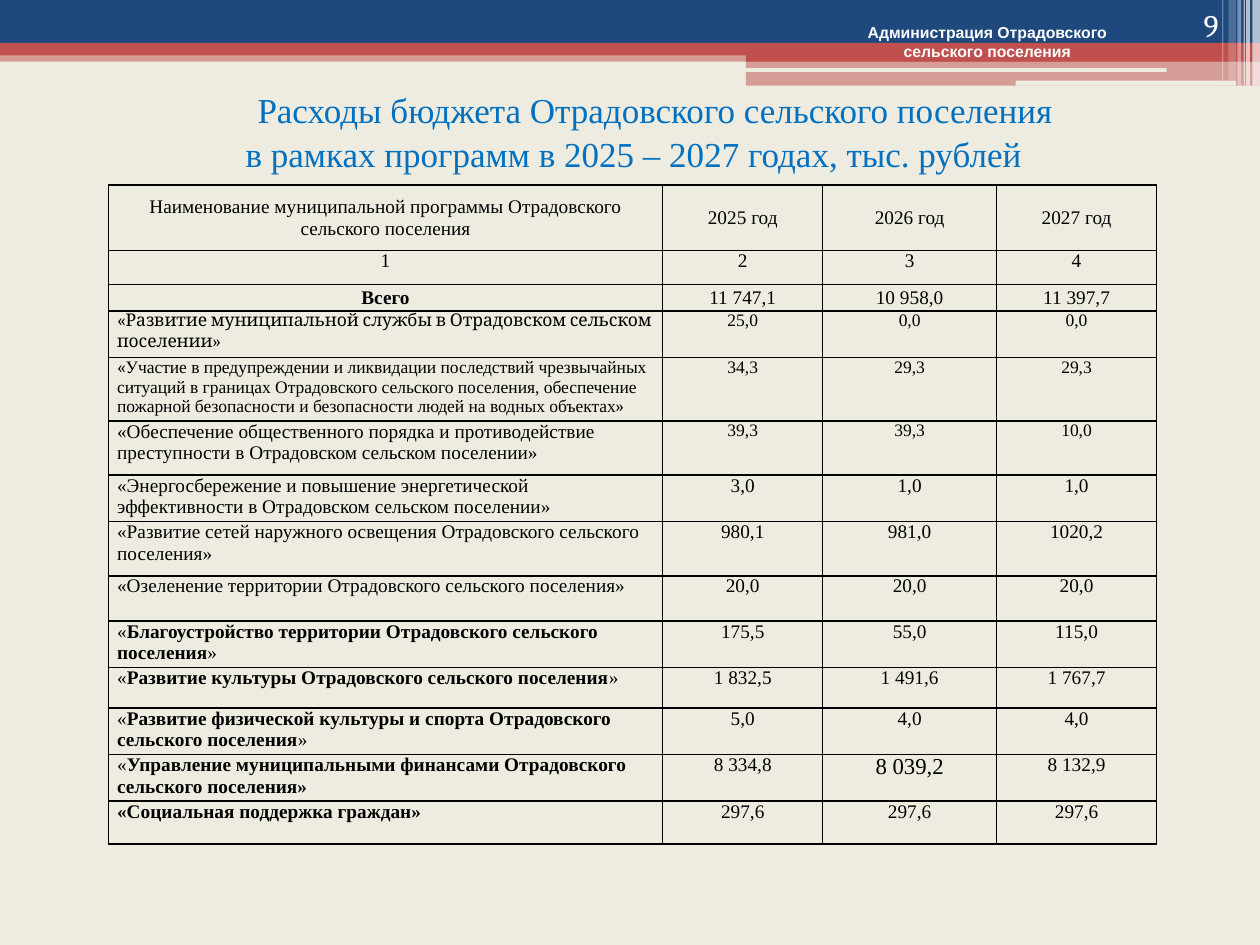
from dataclasses import dataclass

from lxml import etree
from pptx import Presentation
from pptx import util as u
from pptx.dml.color import RGBColor
from pptx.enum import shapes, text
from pptx.oxml import ns


@dataclass(frozen=True)
class Theme:
    paper: str = "EEECE1"
    navy: str = "1F497D"
    red: str = "C0504D"
    white: str = "FFFFFF"
    title: str = "0070C0"
    ink: str = "000000"
    serif: str = "Times New Roman"
    alternate: str = "Cambria"
    sans: str = "Arial"
    title_size: int = 20
    number_size: int = 18
    large: int = 13
    normal: int = 11
    small: int = 10
    label_size: int = 9


THEME = Theme()
UNIT = u.Inches(0.1)  # the slide is a grid of 100 columns by 75 rows
COLUMNS, ROWS = 100, 75
NO_STYLE = "{2D5ABB26-0587-4C30-8999-92F81FD0307C}"
CENTER = text.PP_ALIGN.CENTER
MIDDLE = text.MSO_ANCHOR.MIDDLE
RECT = shapes.MSO_SHAPE.RECTANGLE
ROUND = shapes.MSO_SHAPE.ROUNDED_RECTANGLE

# Page decoration: left, top, width, height, colour, opacity, shape
BANDS = [
    (0, 4, 100, 0.9, THEME.red, 50, RECT),
    (0, 0, 100, 3.4, THEME.navy, 100, RECT),
    (0, 3.4, 100, 1.5 - 0.5, THEME.red, 100, RECT),
    (59.2, 3.9, 40.8, 1, THEME.red, 100, RECT),
    (59.2, 4.8, 40.8, 2, THEME.red, 50, RECT),
    (59.1, 5.4, 33.5, 0.3, THEME.paper, 100, ROUND),
    (80.6, 6.4, 17.5, 0.4, THEME.paper, 100, ROUND),
]
# Light strips at the right edge: left, width, height, opacity
STRIPS = [(99.4, 0.6, 6.8, 65), (98.9, 0.3, 6.8, 65), (98.7, 0.1, 6.8, 60),
          (98.2, 0.3, 6.8, 40), (97.5, 0.6, 6.4, 20), (97, 0.1, 6.4, 30)]

TITLE_LINES = [("Расходы бюджета Отрадовского сельского поселения", 4),
               ("в рамках программ в 2025 – 2027 годах, тыс. рублей", 0.6)]

COLUMN_WIDTHS = [44, 12.7, 13.8, 12.7]
ROW_HEIGHTS = [5.2, 2.7, 2.1, 3.7, 5, 4.3, 3.7, 4.3, 3.6, 3.7, 3.2, 3.7, 3.7, 3.4]
# Text between asterisks is accented: bold, or in the alternate font
TABLE = [
    ("Наименование муниципальной программы Отрадовского сельского поселения",
     "2025 год", "2026 год", "2027 год"),
    ("1", "2", "3", "4"),
    ("*Всего*", "11 747,1", "10 958,0", "11 397,7"),
    ("*«Развитие муниципальной службы в Отрадовском сельском поселении»*",
     "25,0", "0,0", "0,0"),
    ("*«*Участие в предупреждении и ликвидации последствий чрезвычайных ситуаций "
     "в границах Отрадовского сельского поселения, обеспечение пожарной "
     "безопасности и безопасности людей на водных объектах*»*",
     "34,3", "29,3", "29,3"),
    ("«Обеспечение общественного порядка и противодействие преступности "
     "в Отрадовском сельском поселении»", "39,3", "39,3", "10,0"),
    ("«Энергосбережение и повышение энергетической эффективности "
     "в Отрадовском сельском поселении»", "3,0", "1,0", "1,0"),
    ("«Развитие сетей наружного освещения Отрадовского сельского поселения»",
     "980,1", "981,0", "1020,2"),
    ("«Озеленение территории Отрадовского сельского поселения»",
     "20,0", "20,0", "20,0"),
    ("«*Благоустройство территории Отрадовского сельского поселения*»",
     "175,5", "55,0", "115,0"),
    ("«*Развитие культуры Отрадовского сельского поселения*»",
     "1 832,5", "1 491,6", "1 767,7"),
    ("«*Развитие физической культуры и спорта Отрадовского сельского поселения*»",
     "5,0", "4,0", "4,0"),
    ("«*Управление муниципальными финансами Отрадовского сельского поселения»*",
     "8 334,8", "8 039,2", "8 132,9"),
    ("*«Социальная поддержка граждан»*", "297,6", "297,6", "297,6"),
]
HEADER_ROWS = 3
MIDDLE_ROWS = {0, 2}
ALTERNATE_ROWS = {3, 4}
SMALL_CELLS = {(row, col) for row in (3, 4) for col in range(4)}
SMALL_CELLS |= {(5, col) for col in (1, 2, 3)}
LARGE_CELLS = {(12, 2)}


def grid(*lengths):
    return [round(length * UNIT) for length in lengths]


def style(span, font, size, color, bold=False):
    span.font.name = font
    span.font.size = u.Pt(size)
    span.font.bold = bold
    span.font.color.rgb = RGBColor.from_string(color)


def add_band(page, left, top, width, height, color, opacity=100, kind=RECT):
    band = page.shapes.add_shape(kind, *grid(left, top, width, height))
    band.shadow.inherit = False
    band.line.fill.background()
    band.fill.solid()
    band.fill.fore_color.rgb = RGBColor.from_string(color)
    if opacity < 100:
        tint = band.fill._xPr.find(".//" + ns.qn("a:srgbClr"))
        etree.SubElement(tint, ns.qn("a:alpha"), val=str(opacity * 1000))


def add_title(page):
    title = page.shapes.title
    title.left, title.top, title.width, title.height = grid(0, 6.8, COLUMNS, 7.1)
    frame = title.text_frame
    frame.vertical_anchor = MIDDLE
    frame.text = "\n".join(line for line, _ in TITLE_LINES)
    for para, (_, indent) in zip(frame.paragraphs, TITLE_LINES):
        para.alignment = CENTER
        para.line_spacing = u.Pt(25)
        para._p.get_or_add_pPr().set("marL", str(grid(indent)[0]))
        style(para.runs[0], THEME.serif, THEME.title_size, THEME.title)


def add_label(page, place, words, align, anchor, font, size, bold=False):
    frame = page.shapes.add_textbox(*grid(*place)).text_frame
    frame.word_wrap = True
    frame.vertical_anchor = anchor
    frame.text = words
    for para in frame.paragraphs:
        para.alignment = align
        style(para.runs[0], font, size, THEME.white, bold)


def add_borders(cell):
    props = cell._tc.get_or_add_tcPr()
    for place, side in enumerate(("lnL", "lnR", "lnT", "lnB")):
        line = etree.Element(ns.qn("a:" + side), w=str(u.Pt(1)))
        fill = etree.SubElement(line, ns.qn("a:solidFill"))
        etree.SubElement(fill, ns.qn("a:srgbClr"), val=THEME.ink)
        props.insert(place, line)


def fill_cell(cell, words, row, col):
    cell.margin_left = cell.margin_right = u.Inches(0.07)
    cell.margin_top = cell.margin_bottom = 0
    cell.vertical_anchor = MIDDLE if row in MIDDLE_ROWS else text.MSO_ANCHOR.TOP
    cell.fill.background()
    add_borders(cell)
    para = cell.text_frame.paragraphs[0]
    if col or row < HEADER_ROWS:
        para.alignment = CENTER
    size = THEME.normal
    if (row, col) in SMALL_CELLS:
        size = THEME.small
    elif (row, col) in LARGE_CELLS:
        size = THEME.large
    for number, piece in enumerate(words.split("*")):
        if piece:
            span = para.add_run()
            span.text = piece
            accent = number % 2 == 1
            other_font = accent and row in ALTERNATE_ROWS
            style(span, THEME.alternate if other_font else THEME.serif, size,
                  THEME.ink, accent and not other_font)


def add_budget_table(page):
    place = grid(8.6, 14.7, sum(COLUMN_WIDTHS), sum(ROW_HEIGHTS))
    table = page.shapes.add_table(len(TABLE), len(COLUMN_WIDTHS), *place).table
    table.first_row = table.horz_banding = False
    table._tbl.tblPr.find(ns.qn("a:tableStyleId")).text = NO_STYLE
    for column, width in zip(table.columns, grid(*COLUMN_WIDTHS)):
        column.width = width
    for line, height in zip(table.rows, grid(*ROW_HEIGHTS)):
        line.height = height
    for row, entries in enumerate(TABLE):
        for col, words in enumerate(entries):
            fill_cell(table.cell(row, col), words, row, col)


def main():
    deck = Presentation()
    deck.slide_width, deck.slide_height = grid(COLUMNS, ROWS)
    page = deck.slides.add_slide(deck.slide_layouts[5])
    page.background.fill.solid()
    page.background.fill.fore_color.rgb = RGBColor.from_string(THEME.paper)
    # Coloured page header
    for band in BANDS:
        add_band(page, *band)
    for left, width, height, opacity in STRIPS:
        add_band(page, left, 0, width, height, THEME.white, opacity)
    # Title, owner and page number
    add_title(page)
    add_label(page, (62.8, 1.3, 31.1, 4), "Администрация Отрадовского\nсельского поселения",
              CENTER, text.MSO_ANCHOR.TOP, THEME.sans, THEME.label_size, True)
    add_label(page, (89.4, 0, 8.3, 4), "9", text.PP_ALIGN.RIGHT,
              text.MSO_ANCHOR.BOTTOM, THEME.alternate, THEME.number_size)
    # Spending by programme
    add_budget_table(page)
    deck.save("out.pptx")


if __name__ == "__main__":
    main()
